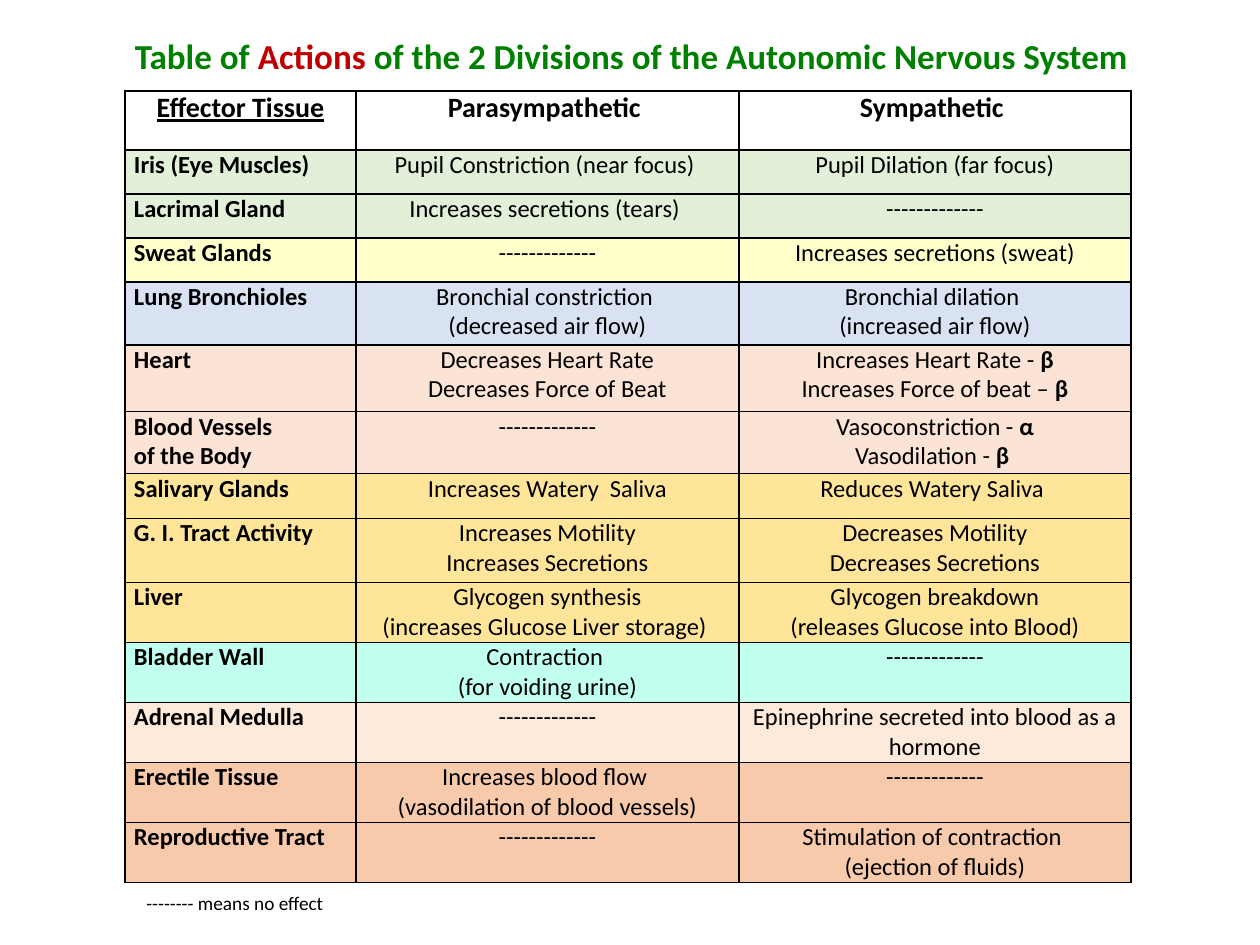
"""Build a slide tabulating the actions of the two autonomic divisions."""
from lxml import etree
from pptx import Presentation
from pptx.dml.color import RGBColor
from pptx.enum.text import MSO_ANCHOR, PP_ALIGN
from pptx.oxml.ns import qn
from pptx.util import Pt

CENTER, LEFT, JUSTIFY = PP_ALIGN.CENTER, PP_ALIGN.LEFT, PP_ALIGN.JUSTIFY
MIDDLE, TOP = MSO_ANCHOR.MIDDLE, MSO_ANCHOR.TOP
PX = 914400 // 126
FONT, BLACK, GREEN, RED = "Calibri", "000000", "008000", "C00000"
LEAF, CREAM, BLUE, PEACH = "E2EFD9", "FFFFCC", "D9E2F3", "FBE4D5"
GOLD, AQUA, SHELL, SALMON = "FFE599", "C1FFEF", "FDEADA", "F7CAAC"
NONE = "-------------"

TITLE = [("Table of ", GREEN), ("Actions", RED),
         (" of the 2 Divisions of the Autonomic Nervous System", GREEN)]
HEADINGS = ("Effector Tissue", "Parasympathetic ", "Sympathetic ")
ROWS = [
    (44, LEAF, "Iris (Eye Muscles)", "Pupil Constriction (near focus) ",
     "Pupil Dilation (far focus)"),
    (44, LEAF, "Lacrimal Gland", "Increases secretions (tears) ", NONE),
    (44, CREAM, "Sweat Glands", NONE, "Increases secretions (sweat)"),
    (63, BLUE, "Lung Bronchioles", "Bronchial constriction \n(decreased air flow)",
     "Bronchial dilation \n(increased air flow)"),
    (67, PEACH, "Heart", "Decreases Heart Rate\nDecreases Force of Beat",
     "Increases Heart Rate - β\nIncreases Force of beat – β"),
    (62, PEACH, "Blood Vessels\nof the Body", NONE,
     "Vasoconstriction - α\nVasodilation - β "),
    (45, GOLD, "Salivary Glands", "Increases Watery  Saliva", "Reduces Watery Saliva "),
    (64, GOLD, "G. I. Tract Activity ", "Increases Motility\nIncreases Secretions",
     "Decreases Motility\nDecreases Secretions"),
    (60, GOLD, "Liver", "Glycogen synthesis\n(increases Glucose Liver storage) ",
     "Glycogen breakdown\n(releases Glucose into Blood)"),
    (60, AQUA, "Bladder Wall", "Contraction \n(for voiding urine)", NONE),
    (60, SHELL, "Adrenal Medulla", NONE, "Epinephrine secreted into blood as a hormone"),
    (60, SALMON, "Erectile Tissue ",
     "Increases blood flow \n(vasodilation of blood vessels)", NONE),
    (60, SALMON, "Reproductive Tract", NONE,
     "Stimulation of contraction \n(ejection of fluids)"),
]
HEADING_HEIGHT = 59
COLUMN_WIDTHS = (231, 383, 392)
TABLE_LEFT, TABLE_TOP = 125, 91


def color(hex_string):
    return RGBColor.from_string(hex_string)


def style(font, size, bold=False, ink=BLACK):
    font.name, font.size, font.bold = FONT, Pt(size), bold
    font.color.rgb = color(ink)


def place(box, left, top, width, height):
    box.left, box.top, box.width, box.height = (
        n * PX for n in (left, top, width, height))


def add_borders(cell):
    properties = cell._tc.get_or_add_tcPr()
    for side in ("a:lnL", "a:lnR", "a:lnT", "a:lnB"):
        line = etree.SubElement(properties, qn(side), w=str(Pt(1)))
        fill = etree.SubElement(line, qn("a:solidFill"))
        etree.SubElement(fill, qn("a:srgbClr"), val=BLACK)


def write_line(para, line):
    """Write one line, setting a closing Greek receptor letter in bold."""
    cut = next((i for i, letter in enumerate(line) if letter in "αβ"), len(line))
    para.add_run().text = line[:cut]
    if line[cut:]:
        span = para.add_run()
        span.text = line[cut:]
        span.font.bold = True


def fill_cell(cell, text, size, bold, align, shade):
    add_borders(cell)
    if shade:
        cell.fill.solid()
        cell.fill.fore_color.rgb = color(shade)
    else:
        cell.fill.background()
    cell.margin_left = cell.margin_right = 9 * PX
    cell.margin_top = cell.margin_bottom = 0
    cell.vertical_anchor = TOP
    frame = cell.text_frame
    for number, line in enumerate(text.split("\n")):
        para = frame.add_paragraph() if number else frame.paragraphs[0]
        para.alignment = align
        style(para.font, size, bold)
        write_line(para, line)


def add_title(page):
    box = page.shapes.title
    place(box, 118, 28, 1027, 55)
    frame = box.text_frame
    frame.word_wrap = False
    frame.vertical_anchor = MIDDLE
    para = frame.paragraphs[0]
    para.alignment = CENTER
    for text, ink in TITLE:
        span = para.add_run()
        span.text = text
        style(span.font, 20, True, ink)


def add_actions_table(page):
    heights = [HEADING_HEIGHT] + [row[0] for row in ROWS]
    box = page.shapes.add_table(len(heights), len(COLUMN_WIDTHS), 0, 0, PX, PX)
    place(box, TABLE_LEFT, TABLE_TOP, sum(COLUMN_WIDTHS), sum(heights))
    table = box.table
    for column, width in zip(table.columns, COLUMN_WIDTHS):
        column.width = width * PX
    for row, height in zip(table.rows, heights):
        row.height = height * PX
    for column, heading in enumerate(HEADINGS):
        fill_cell(table.cell(0, column), heading, 16, True, CENTER, None)
    table.cell(0, 0).text_frame.paragraphs[0].runs[0].font.underline = True
    for number, (_, shade, *texts) in enumerate(ROWS, 1):
        for column, text in enumerate(texts):
            label_align = LEFT if "\n" in text else JUSTIFY
            align = CENTER if column else label_align
            fill_cell(table.cell(number, column), text, 14, column == 0, align, shade)


def add_key(page):
    box = page.shapes.add_textbox(0, 0, PX, PX)
    place(box, 134, 885, 205, 36)
    box.text_frame.word_wrap = False
    para = box.text_frame.paragraphs[0]
    para.text = "-------- means no effect"
    style(para.font, 11)


def main():
    deck = Presentation()
    deck.slide_width, deck.slide_height = 1260 * PX, 945 * PX
    page = deck.slides.add_slide(deck.slide_layouts[5])
    add_title(page)
    add_actions_table(page)
    add_key(page)
    deck.save("out.pptx")


if __name__ == "__main__":
    main()
